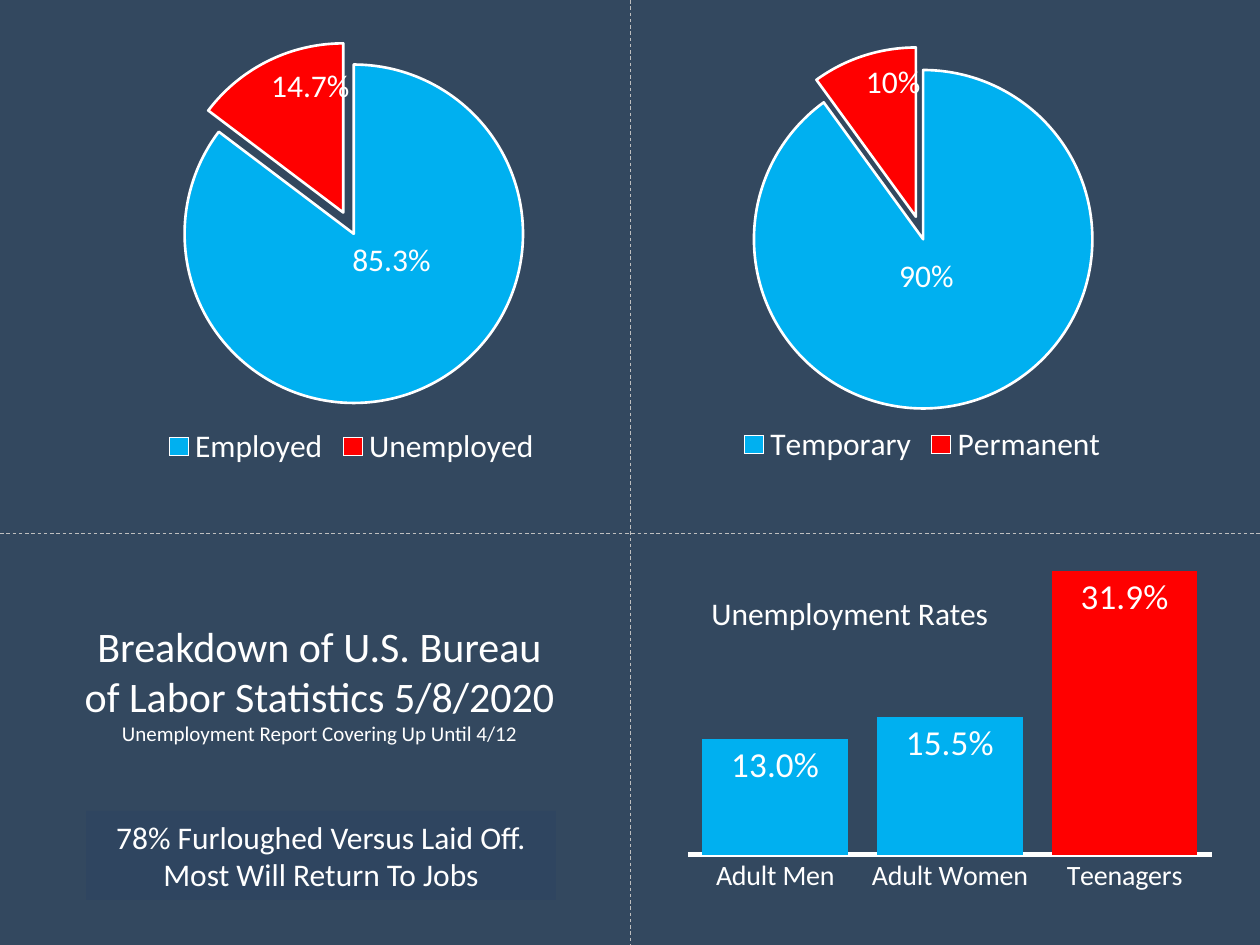
import pptx
import pptx.chart.data
import pptx.dml.color
import pptx.enum.chart
import pptx.enum.dml
import pptx.enum.shapes
import pptx.enum.text
import pptx.oxml
import pptx.oxml.ns
import pptx.util

PX_PER_INCH = 126
SLIDE_W, SLIDE_H = 1260, 945
MID_X, MID_Y = 630, 533


class Theme:
    FONT = "Calibri"
    BACKDROP = "33485F"
    BANNER = "2F4560"
    MAIN = "00B0F0"
    ACCENT = "FF0000"
    TEXT = "FFFFFF"
    DIVIDER = "BFBFBF"
    TITLE, VALUE, BODY, AXIS, NOTE = 24, 20, 18, 16, 12


def px(n):
    return pptx.util.Emu(round(n * 914400 / PX_PER_INCH))


def rgb(color):
    return pptx.dml.color.RGBColor.from_string(color)


def set_attrs(obj, values):
    for name, value in values.items():
        setattr(obj, name, value)


def set_font(font, size):
    set_attrs(font, {"name": Theme.FONT, "size": pptx.util.Pt(size), "bold": False})
    font.color.rgb = rgb(Theme.TEXT)


def set_fill(fill, color):
    fill.solid()
    fill.fore_color.rgb = rgb(color)


def chart_xml(xml):
    ns = pptx.oxml.ns.nsdecls("c")
    return pptx.oxml.parse_xml(xml.replace(">", f" {ns}>", 1))


def layout_xml(**values):
    """Manual chart layout; each value becomes one child element."""
    items = "".join(f'<c:{k} val="{v}"/>' for k, v in values.items())
    return chart_xml(f"<c:layout><c:manualLayout>{items}</c:manualLayout></c:layout>")


def add_panel(slide, box, color):
    sp = slide.shapes.add_shape(pptx.enum.shapes.MSO_SHAPE.RECTANGLE, *map(px, box))
    set_fill(sp.fill, color)
    sp.line.fill.background()
    sp.shadow.inherit = False
    return sp


def write_text(sp, lines, wrap=True, centered=True):
    tf = sp.text_frame
    set_attrs(tf, {"word_wrap": wrap,
                   "auto_size": pptx.enum.text.MSO_AUTO_SIZE.SHAPE_TO_FIT_TEXT})
    align = pptx.enum.text.PP_ALIGN
    for i, (text, size) in enumerate(lines):
        p = tf.paragraphs[0] if i == 0 else tf.add_paragraph()
        p.text = text
        p.alignment = align.CENTER if centered else align.LEFT
        for r in p.runs:
            set_font(r.font, size)


def add_divider(slide, *ends):
    line = slide.shapes.add_connector(
        pptx.enum.shapes.MSO_CONNECTOR.STRAIGHT, *map(px, ends))
    line.line.color.rgb = rgb(Theme.DIVIDER)
    set_attrs(line.line, {"width": pptx.util.Pt(0.5),
                          "dash_style": pptx.enum.dml.MSO_LINE.DASH})
    line._element.spPr.append(
        pptx.oxml.parse_xml(f'<a:effectLst {pptx.oxml.ns.nsdecls("a")}/>'))


def add_chart(slide, kind, box, shares, number_format):
    data = pptx.chart.data.CategoryChartData(number_format=number_format)
    data.categories = list(shares)
    data.add_series("Series 1", list(shares.values()))
    chart = slide.shapes.add_chart(kind, *map(px, box), data).chart
    chart.has_title = False
    set_font(chart.font, Theme.BODY)
    return chart


def add_pie(slide, box, shares, number_format, label_shift):
    chart = add_chart(slide, pptx.enum.chart.XL_CHART_TYPE.PIE, box, shares, number_format)
    chart.has_legend = True
    set_attrs(chart.legend, {"position": pptx.enum.chart.XL_LEGEND_POSITION.BOTTOM,
                             "include_in_layout": False})
    set_font(chart.legend.font, Theme.BODY)

    # Plot area
    area = chart._chartSpace.chart.plotArea
    for old in area.findall(pptx.oxml.ns.qn("c:layout")):
        area.remove(old)
    area.insert(0, layout_xml(layoutTarget="inner", xMode="edge", yMode="edge",
                              x=0.18, y=0.01, w=0.63, h=0.86))

    # Slices and their labels
    plot = chart.plots[0]
    plot.vary_by_categories = True
    series = plot.series[0]
    series.format.line.color.rgb = rgb(Theme.TEXT)
    pos = pptx.enum.chart.XL_LABEL_POSITION
    slices = ((Theme.MAIN, pos.CENTER, label_shift), (Theme.ACCENT, pos.INSIDE_END, None))
    for i, (color, position, shift) in enumerate(slices):
        point = series.points[i]
        set_fill(point.format.fill, color)
        point.format.line.color.rgb = rgb(Theme.TEXT)
        point.format.line.width = pptx.util.Pt(1.5)
        label = point.data_label
        set_font(label.font, Theme.BODY)
        label.position = position
        idx = label._get_or_add_dLbl().find(pptx.oxml.ns.qn("c:idx"))
        fmt = chart_xml("<c:numFmt></c:numFmt>")
        fmt.set("formatCode", number_format)
        fmt.set("sourceLinked", "0")
        idx.addnext(fmt)
        if shift:
            idx.addnext(layout_xml(x=shift[0], y=shift[1]))
    explosion = chart_xml("<c:explosion></c:explosion>")
    explosion.set("val", "7")
    series._element.get_or_add_spPr().addnext(explosion)


def add_columns(slide, box, shares, highlight):
    chart = add_chart(slide, pptx.enum.chart.XL_CHART_TYPE.COLUMN_CLUSTERED,
                      box, shares, "0.0%")
    chart.has_legend = False
    plot = chart.plots[0]
    set_attrs(plot, {"gap_width": 20, "overlap": -27, "vary_by_categories": False,
                     "has_data_labels": True})
    set_attrs(plot.data_labels, {
        "show_value": True, "number_format": "0.0%", "number_format_is_linked": False,
        "position": pptx.enum.chart.XL_LABEL_POSITION.INSIDE_END})
    set_font(plot.data_labels.font, Theme.VALUE)
    series = plot.series[0]
    set_fill(series.format.fill, Theme.MAIN)
    set_fill(series.points[highlight].format.fill, Theme.ACCENT)

    # Axes
    set_attrs(chart.value_axis, {"has_major_gridlines": False, "visible": False,
                                 "minimum_scale": 0, "maximum_scale": 0.35})
    axis = chart.category_axis
    axis.major_tick_mark = pptx.enum.chart.XL_TICK_MARK.NONE
    set_font(axis.tick_labels.font, Theme.AXIS)
    axis.format.line.color.rgb = rgb(Theme.TEXT)
    axis.format.line.width = pptx.util.Pt(3)


def main():
    prs = pptx.Presentation()
    set_attrs(prs, {"slide_width": px(SLIDE_W), "slide_height": px(SLIDE_H)})
    slide = prs.slides.add_slide(prs.slide_layouts[6])
    add_panel(slide, (0, 0, SLIDE_W, SLIDE_H), Theme.BACKDROP)

    # Charts
    add_pie(slide, (64, 28, 575, 444),
            {"Employed": 0.853, "Unemployed": 0.147}, "0.0%", (0, -0.11))
    add_pie(slide, (635, 38, 575, 432),
            {"Temporary": 0.9, "Permanent": 0.1}, "0%", (-0.04, -0.1))
    add_columns(slide, (677, 536, 546, 365),
                {"Adult Men": 0.13, "Adult Women": 0.155, "Teenagers": 0.319}, 2)

    # Title and column chart heading
    title = slide.shapes.add_textbox(*map(px, (38, 614, 563, 140)))
    write_text(title, [("Breakdown of U.S. Bureau", Theme.TITLE),
                       ("of Labor Statistics 5/8/2020", Theme.TITLE),
                       ("Unemployment Report Covering Up Until 4/12", Theme.NOTE)])
    heading = slide.shapes.add_textbox(*map(px, (699, 588, 305, 50)))
    write_text(heading, [("Unemployment Rates", Theme.BODY)], wrap=False, centered=False)

    # Quadrant dividers
    add_divider(slide, MID_X, 0, MID_X, SLIDE_H)
    add_divider(slide, 0, MID_Y, SLIDE_W, MID_Y)

    # Takeaway banner
    banner = add_panel(slide, (86, 811, 470, 89), Theme.BANNER)
    write_text(banner, [("78% Furloughed Versus Laid Off.\vMost Will Return To Jobs",
                         Theme.BODY)])
    prs.save("out.pptx")


if __name__ == "__main__":
    main()
